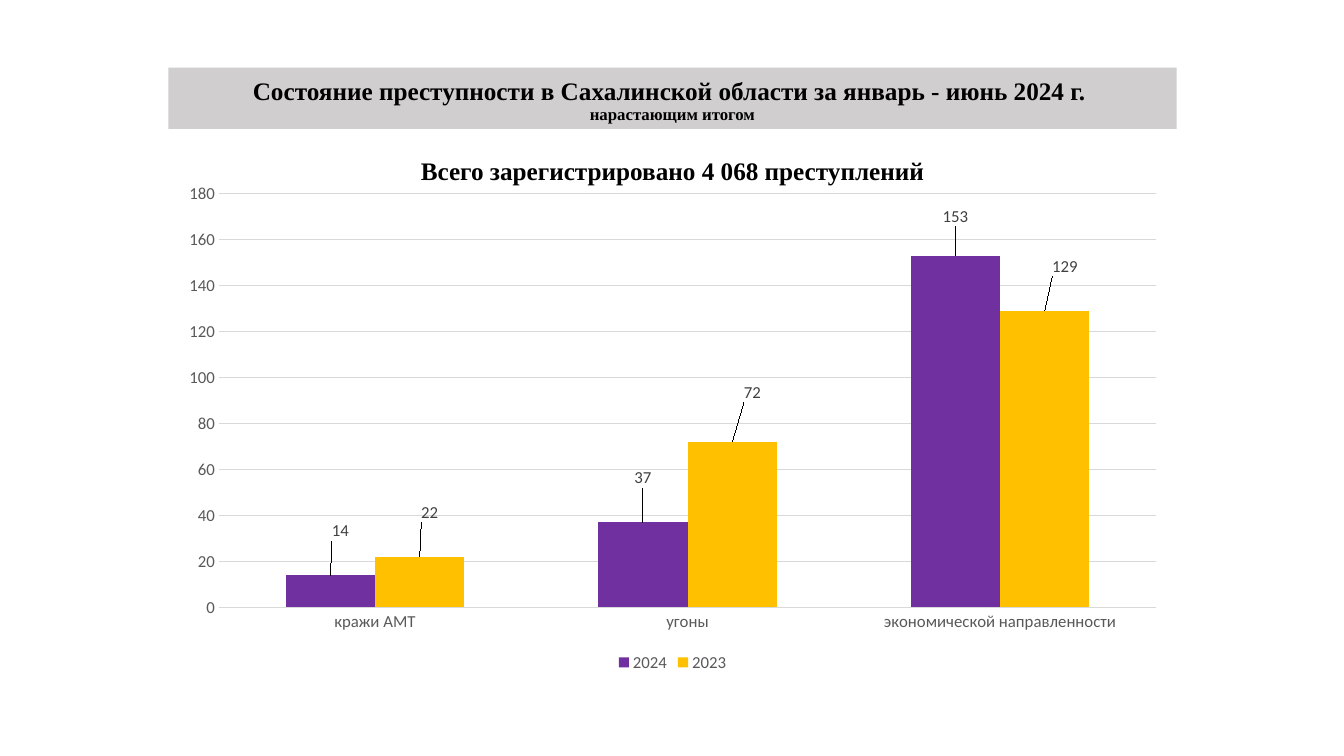
from lxml import etree
from pptx import Presentation
from pptx import util as u
from pptx.chart.data import CategoryChartData
from pptx.dml.color import RGBColor
from pptx.enum import chart as ch, text
from pptx.oxml.ns import qn

COLORS = {"band": "D0CECE", "heading": "000000", "axis": "595959", "label": "404040",
          "grid": "D9D9D9", "2024": "7030A0", "2023": "FFC000"}
CRIMES = ["кражи АМТ", "угоны", "экономической направленности"]
COUNTS = {"2024": [14, 37, 153], "2023": [22, 72, 129]}
LABEL_SHIFTS = {"2024": [(0.01, -0.06), (0, -0.06), (0, -0.05)],
                "2023": [(0.01, -0.06), (0.02, -0.07), (0.02, -0.06)]}


def color(name):
    """Return the named colour."""
    return RGBColor.from_string(COLORS[name])


def style_font(font, size, name, face="Calibri", bold=False):
    """Set face, size, weight and colour of a font."""
    font.name, font.size, font.bold = face, u.Pt(size), bold
    font.color.rgb = color(name)


def fill_heading(holder, box, words, sizes, spacing, anchor):
    """Place a heading placeholder and format its centred lines."""
    holder.left, holder.top, holder.width, holder.height = map(u.Inches, box)
    frame = holder.text_frame
    frame.text = words
    frame.word_wrap = True
    frame.auto_size = text.MSO_AUTO_SIZE.NONE
    frame.vertical_anchor = anchor
    paragraph = frame.paragraphs[0]
    paragraph.alignment = text.PP_ALIGN.CENTER
    paragraph.line_spacing = spacing
    for run, size in zip(paragraph.runs, sizes):
        style_font(run.font, size, "heading", "Times New Roman", True)


def manual_layout(**values):
    """Build a chart layout element from its settings."""
    layout = etree.Element(qn("c:layout"))
    manual = etree.SubElement(layout, qn("c:manualLayout"))
    for key, value in values.items():
        etree.SubElement(manual, qn(f"c:{key}")).set("val", str(value))
    return layout


def style_axes(chart):
    """Format both axes and the gridlines."""
    for axis in (chart.category_axis, chart.value_axis):
        axis.major_tick_mark = axis.minor_tick_mark = ch.XL_TICK_MARK.NONE
        axis.format.line.fill.background()
        style_font(axis.tick_labels.font, 12, "axis")
    counts = chart.value_axis
    counts.minimum_scale, counts.maximum_scale, counts.major_unit = 0, 180, 20
    grid = counts.major_gridlines.format.line
    grid.color.rgb, grid.width = color("grid"), u.Pt(0.75)


def style_year(year):
    """Colour the bars of a year and shift their value labels."""
    year.format.fill.solid()
    year.format.fill.fore_color.rgb = color(year.name)
    year.data_labels.show_value = True
    style_font(year.data_labels.font, 12, "label")
    for index, (x, y) in enumerate(LABEL_SHIFTS[year.name]):
        label = year.points[index].data_label
        style_font(label.font, 12, "label")
        label.position = ch.XL_LABEL_POSITION.OUTSIDE_END
    indexes = year.data_labels._element.findall(f"{qn('c:dLbl')}/{qn('c:idx')}")
    for index, (x, y) in zip(indexes, LABEL_SHIFTS[year.name]):
        index.addnext(manual_layout(x=x, y=y))


def add_crime_chart(slide):
    """Add the column chart comparing both years."""
    data = CategoryChartData()
    data.categories = CRIMES
    for year, counts in COUNTS.items():
        data.add_series(year, counts)
    box = map(u.Inches, (1.67, 1.72, 10, 4.99))
    chart = slide.shapes.add_chart(ch.XL_CHART_TYPE.COLUMN_CLUSTERED, *box, data).chart
    style_font(chart.font, 10, "heading")
    chart.has_title = False
    chart.has_legend = True
    chart.legend.position = ch.XL_LEGEND_POSITION.BOTTOM
    chart.legend.include_in_layout = False
    style_font(chart.legend.font, 12, "axis")
    style_axes(chart)
    bars = chart.plots[0]
    bars.gap_width, bars.overlap, bars.vary_by_categories = 150, 0, False
    for year in bars.series:
        style_year(year)
    area = chart._chartSpace.find(f".//{qn('c:plotArea')}")
    for layout in area.findall(qn("c:layout")):
        area.remove(layout)
    area.insert(0, manual_layout(layoutTarget="inner", xMode="edge", yMode="edge",
                                 x=0.05, y=0.04, w=0.93, h=0.823))


def main():
    """Build and save the slide."""
    deck = Presentation()
    deck.slide_width, deck.slide_height = u.Inches(13.33), u.Inches(7.5)
    slide = deck.slides.add_slide(deck.slide_layouts[0])
    title, total = slide.placeholders
    fill_heading(title, (1.67, 0.67, 10, 0.61),
                 "Состояние преступности в Сахалинской области за январь - июнь 2024 г. "
                 "\vнарастающим итогом", (18, 12), 0.9, text.MSO_ANCHOR.BOTTOM)
    title.fill.solid()
    title.fill.fore_color.rgb = color("band")
    fill_heading(total, (1.67, 1.55, 10, 0.36), "Всего зарегистрировано 4 068 преступлений",
                 (18,), 0.8, text.MSO_ANCHOR.TOP)
    total.text_frame.paragraphs[0].space_before = u.Pt(10)
    add_crime_chart(slide)


    deck.save("out.pptx")


if __name__ == "__main__":
    main()
